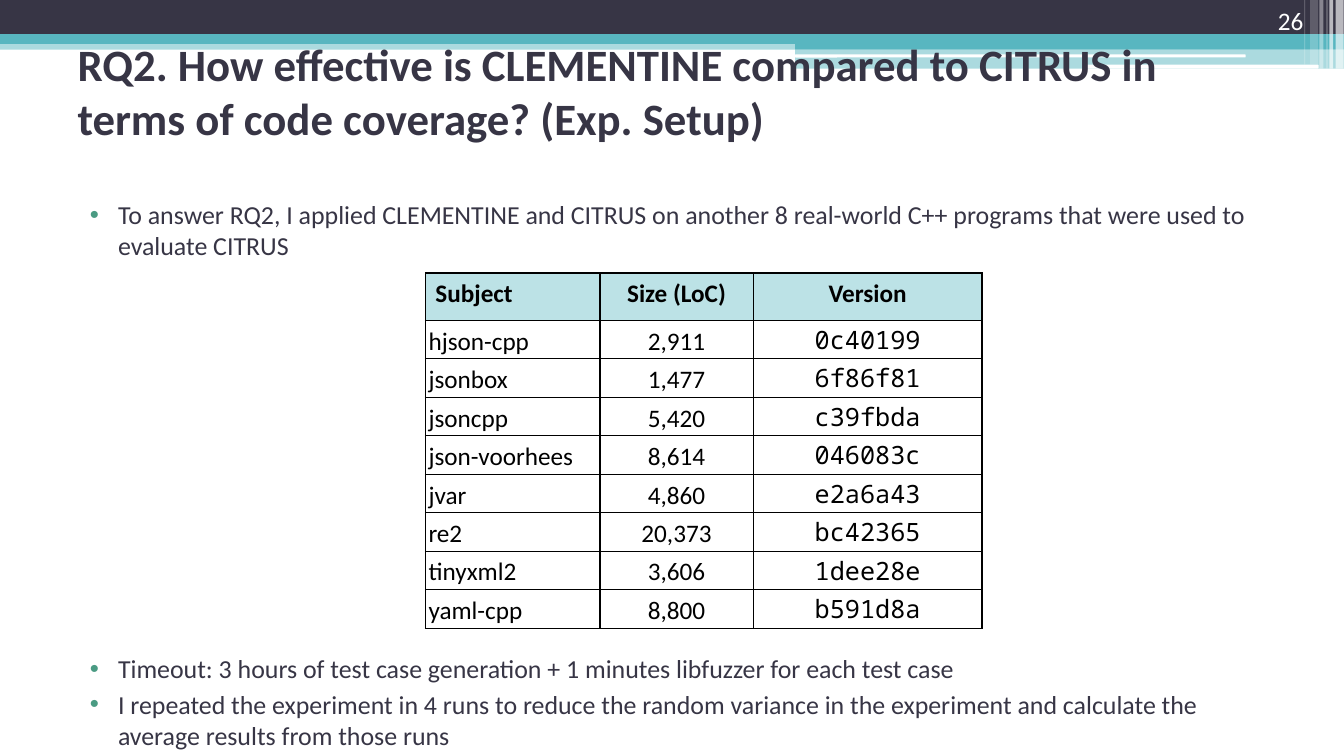
from lxml.etree import SubElement
from pptx import Presentation
from pptx.dml.color import RGBColor
from pptx.enum.shapes import MSO_SHAPE
from pptx.enum.text import MSO_ANCHOR, MSO_AUTO_SIZE, PP_ALIGN
from pptx.oxml.ns import qn
from pptx.util import Cm, Pt

WIDTH, HEIGHT = 33.87, 19.05
DARK, TEAL, WHITE, BLACK = "373545", "58B6C0", "FFFFFF", "000000"
BULLET, HEADER = "4A9B83", "BCE2E6"
SANS, MONO = "Calibri", "Noto Sans Mono"

SUBJECTS = [
    ("hjson-cpp", "2,911", "0c40199"),
    ("jsonbox", "1,477", "6f86f81"),
    ("jsoncpp", "5,420", "c39fbda"),
    ("json-voorhees", "8,614", "046083c"),
    ("jvar", "4,860", "e2a6a43"),
    ("re2", "20,373", "bc42365"),
    ("tinyxml2", "3,606", "1dee28e"),
    ("yaml-cpp", "8,800", "b591d8a"),
]
# Text and the space before it in points; the second leaves room for the table
POINTS = [
    ("To answer RQ2, I applied CLEMENTINE and CITRUS on another 8 real-world "
     "C++ programs that were used to evaluate CITRUS", 0),
    ("Timeout: 3 hours of test case generation + 1 minutes libfuzzer for each "
     "test case", 280),
    ("I repeated the experiment in 4 runs to reduce the random variance in the "
     "experiment and calculate the average results from those runs", 3),
]


def rgb(color):
    return RGBColor.from_string(color)


def place(sp, box):
    sp.left, sp.top, sp.width, sp.height = (Cm(v) for v in box)


def add_run(p, text, size, color, font=SANS, bold=False):
    r = p.add_run()
    r.text = text
    r.font.size, r.font.name, r.font.bold = Pt(size), font, bold
    r.font.color.rgb = rgb(color)


def add_bar(s, box, color, alpha=100, kind=MSO_SHAPE.RECTANGLE):
    sp = s.shapes.add_shape(kind, *(Cm(v) for v in box))
    sp.shadow.inherit = False
    sp.line.fill.background()
    sp.fill.solid()
    sp.fill.fore_color.rgb = rgb(color)
    if alpha < 100:
        clr = sp.element.spPr.find(".//" + qn("a:srgbClr"))
        SubElement(clr, qn("a:alpha"), val=str(alpha * 1000))


def add_banner(s, box):
    x, y, w, h = box
    # Full-width bands, then the stepped bands on the right
    step = 20.04
    for left, top, height, color, alpha in [
        (0, 1.02, 0.23, TEAL, 50),
        (0, 0, 0.86, DARK, 100),
        (0, 0.86, 0.25, TEAL, 100),
        (step, 0.99, 0.25, TEAL, 100),
        (step, 1.22, 0.51, TEAL, 50),
    ]:
        add_bar(s, (x + left, y + top, w - left, height), color, alpha)
    # White rules
    for left, top, width, height in [(step, 1.37, 11.35, 0.08),
                                     (27.31, 1.63, 5.92, 0.1)]:
        add_bar(s, (x + left, y + top, width, height), WHITE,
                kind=MSO_SHAPE.ROUNDED_RECTANGLE)
    # Translucent stripes, measured from the right edge
    for inset, width, height, alpha in [
        (0.21, 0.2, h, 65), (0.37, 0.1, h, 65), (0.44, 0.02, h, 60),
        (0.62, 0.1, h, 40), (0.85, 0.2, h - 0.1, 20), (1, 0.02, h - 0.1, 30),
    ]:
        add_bar(s, (x + w - inset, y, width, height), WHITE, alpha)


def add_page_number(s, box, number):
    sp = s.shapes.add_textbox(*(Cm(v) for v in box))
    tf = sp.text_frame
    tf.word_wrap = True
    tf.vertical_anchor = MSO_ANCHOR.BOTTOM
    p = tf.paragraphs[0]
    p.alignment = PP_ALIGN.RIGHT
    add_run(p, number, 18, WHITE)


def fill_title(sp, box, text):
    place(sp, box)
    tf = sp.text_frame
    tf.auto_size = MSO_AUTO_SIZE.NONE
    tf.vertical_anchor = MSO_ANCHOR.MIDDLE
    p = tf.paragraphs[0]
    p.alignment = PP_ALIGN.LEFT
    add_run(p, text, 32, DARK, bold=True)


def fill_body(sp, box, points):
    place(sp, box)
    tf = sp.text_frame
    tf.auto_size = MSO_AUTO_SIZE.NONE
    tf.vertical_anchor = MSO_ANCHOR.TOP
    tf.margin_top = Cm(1.07)
    for i, (text, gap) in enumerate(points):
        p = tf.add_paragraph() if i else tf.paragraphs[0]
        p.space_before = Pt(gap)
        add_run(p, text, 18.5, DARK)
        # Bullet and hanging indent
        pPr = p._p.get_or_add_pPr()
        pPr.set("marL", str(Cm(1.02)))
        pPr.set("indent", str(Cm(-0.71)))
        SubElement(SubElement(pPr, qn("a:buClr")), qn("a:srgbClr"), val=BULLET)
        SubElement(pPr, qn("a:buFont"), typeface="Arial")
        SubElement(pPr, qn("a:buChar"), char="•")


def add_borders(cell):
    tcPr = cell._tc.get_or_add_tcPr()
    for i, side in enumerate(("lnL", "lnR", "lnT", "lnB")):
        ln = tcPr.makeelement(qn("a:" + side), {"w": str(Pt(1))})
        SubElement(SubElement(ln, qn("a:solidFill")), qn("a:srgbClr"), val=BLACK)
        tcPr.insert(i, ln)


def add_subject_table(s, box, rows):
    header_height = 1.19
    data = [("Subject", "Size (LoC)", "Version")] + rows
    table = s.shapes.add_table(len(data), 3, *(Cm(v) for v in box)).table
    for col, width in zip(table.columns, (4.4, 3.86, 5.77)):
        col.width = Cm(width)
    for i, values in enumerate(data):
        row_height = (box[3] - header_height) / len(rows) if i else header_height
        table.rows[i].height = Cm(row_height)
        for j, text in enumerate(values):
            cell = table.cell(i, j)
            if i:
                cell.fill.background()
                cell.vertical_anchor = MSO_ANCHOR.BOTTOM
                cell.margin_left = cell.margin_right = Cm(0.08)
                cell.margin_top = cell.margin_bottom = Cm(0.05)
            else:
                cell.fill.solid()
                cell.fill.fore_color.rgb = rgb(HEADER)
            add_borders(cell)
            p = cell.text_frame.paragraphs[0]
            p.alignment = PP_ALIGN.CENTER if j else PP_ALIGN.LEFT
            add_run(p, text, 18, BLACK, MONO if i and j == 2 else SANS, bold=i == 0)


def main():
    prs = Presentation()
    prs.slide_width, prs.slide_height = Cm(WIDTH), Cm(HEIGHT)
    s = prs.slides.add_slide(prs.slide_layouts[1])
    title, body = s.placeholders

    add_banner(s, (0, 0, WIDTH, 1.73))
    # Bring the placeholders in front of the banner
    for sp in (title, body):
        sp.element.getparent().append(sp.element)
    fill_title(title, (1.7, 0.79, 30.48, 2.97),
               "RQ2. How effective is CLEMENTINE compared to CITRUS in terms "
               "of code coverage? (Exp. Setup)")
    add_page_number(s, (30.28, 0, 2.82, 1.02), "26")
    fill_body(body, (1.7, 3.94, 30.48, 14.33), POINTS)
    add_subject_table(s, (10.72, 6.88, 14.03, 8.95), SUBJECTS)
    prs.save("out.pptx")


if __name__ == "__main__":
    main()
